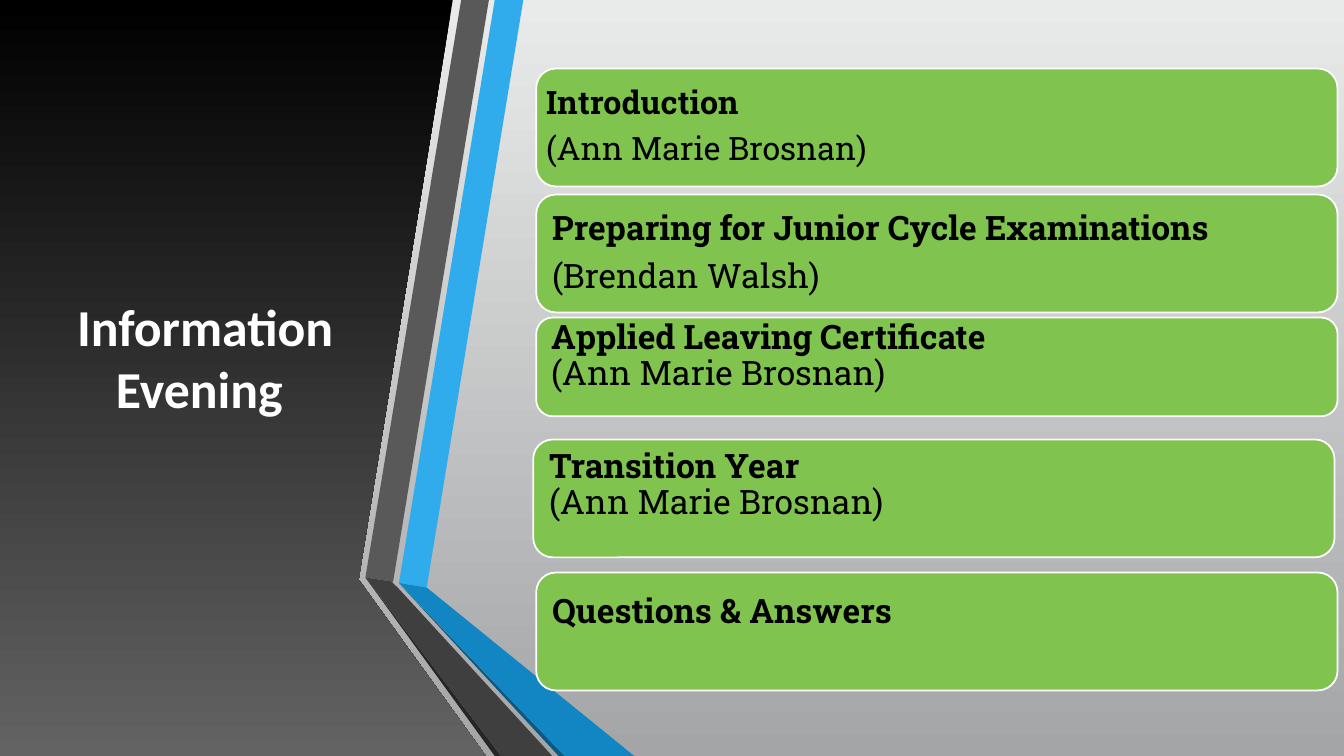
from dataclasses import dataclass

from pptx import Presentation
from pptx.dml.color import RGBColor
from pptx.dml.fill import FillFormat
from pptx.enum.shapes import MSO_SHAPE
from pptx.enum.text import MSO_ANCHOR, MSO_AUTO_SIZE, PP_ALIGN
from pptx.shapes.autoshape import Shape
from pptx.slide import Slide
from pptx.text.text import TextFrame
from pptx.util import Emu, Inches, Pt

COLUMNS, ROWS = 160, 90
WIDTH, HEIGHT = Inches(13.33), Inches(7.5)


@dataclass(frozen=True)
class Theme:
    """Colours, fonts and type sizes of the slide."""

    page: tuple[str, str] = ("E9EAEA", "A3A5A6")
    panel: tuple[str, str] = ("000000", "636363")
    blue: str = "30ACEC"
    blue_fold: str = "1186C3"
    blue_edge: str = "0B5982"
    grey: str = "595959"
    grey_fold: str = "3F3F3F"
    grey_edge: str = "262626"
    card: str = "80C34F"
    white: str = "FFFFFF"
    ink: str = "000000"
    title_font: str = "Calibri"
    card_font: str = "Roboto Slab"
    title_size: float = 37
    card_size: float = 24
    intro_size: float = 23


THEME = Theme()


@dataclass(frozen=True)
class Ribbon:
    """One flat piece of the folded ribbon, as grid points."""

    color: str
    points: tuple[tuple[float, float], ...]


@dataclass(frozen=True)
class Card:
    """One agenda item; lift is the bottom inset that raises its text."""

    top: float
    heading: str
    speaker: str = ""
    left: float = 63.84
    height: float = 14.04
    indent: float = 1.2
    size: float = THEME.card_size
    gap: float = 0
    lift: float = 0


PANEL = ((0, 0), (53.9, 0), (42.7, 69), (57.84, 90), (0, 90))

RIBBONS = (
    Ribbon(THEME.blue, ((47.5, 69.4), (50.8, 69.95), (62.3, 0), (58.9, 0))),
    Ribbon(THEME.grey, ((58.2, 0), (54.9, 0), (43.5, 68.75), (46.8, 69.25))),
    Ribbon(THEME.grey_edge, ((43.5, 68.75), (58.9, 90), (59.65, 90))),
    Ribbon(THEME.blue_edge, ((47.5, 69.45), (66.5, 90), (67.2, 90))),
    Ribbon(THEME.blue_fold, ((47.5, 69.4), (67.2, 90), (75.5, 90), (50.8, 69.95))),
    Ribbon(THEME.grey_fold, ((65.75, 90), (47.35, 69.95), (46.7, 69.35),
                             (46.8, 69.25), (43.5, 68.75), (59.65, 90))),
)

CARDS = (
    Card(8.16, "Introduction", "(Ann Marie Brosnan)", indent=0.5,
         size=THEME.intro_size, gap=8.1),
    Card(23.16, "Preparing for Junior Cycle Examinations", "(Brendan Walsh)", gap=8.4),
    Card(37.8, "Applied Leaving Certificate", "(Ann Marie Brosnan)",
         height=11.76, lift=2.4),
    Card(52.32, "Transition Year", "(Ann Marie Brosnan)", left=63.48, lift=3.1),
    Card(68.16, "Questions & Answers", lift=4.4),
)
CARD_WIDTH = 95.4


def col(n: float) -> Emu:
    """Return the length of n grid columns."""
    return Emu(round(WIDTH * n / COLUMNS))


def row(n: float) -> Emu:
    """Return the length of n grid rows."""
    return Emu(round(HEIGHT * n / ROWS))


def fill_gradient(fill: FillFormat, colors: tuple[str, str]) -> None:
    """Fill from the first colour at the top to the second at the bottom."""
    fill.gradient()
    fill.gradient_angle = 270
    for stop, color in zip(fill.gradient_stops, colors):
        stop.color.rgb = RGBColor.from_string(color)


def fill_solid(fill: FillFormat, color: str) -> None:
    """Fill with one colour."""
    fill.solid()
    fill.fore_color.rgb = RGBColor.from_string(color)


def add_outline(s: Slide, points: tuple[tuple[float, float], ...]) -> Shape:
    """Draw a closed, lineless shape through grid points."""
    start, *rest = [(col(x), row(y)) for x, y in points]
    builder = s.shapes.build_freeform(*start)
    builder.add_line_segments(rest, close=True)
    sp = builder.convert_to_shape()
    sp.shadow.inherit = False
    sp.line.fill.background()
    return sp


def write(tf: TextFrame, text: str, *, font: str, size: float, color: str,
          bold: bool = True, align: PP_ALIGN = PP_ALIGN.LEFT,
          spacing: float = 0.9, before: float = 0) -> None:
    """Write one formatted paragraph, using the first one while it is empty."""
    p = tf.paragraphs[0] if not tf.text else tf.add_paragraph()
    p.alignment, p.line_spacing, p.space_before = align, spacing, Pt(before)
    r = p.add_run()
    r.text = text
    r.font.name, r.font.size, r.font.bold = font, Pt(size), bold
    r.font.color.rgb = RGBColor.from_string(color)


def add_card(s: Slide, card: Card) -> None:
    """Draw an agenda card with its heading and speaker."""
    sp = s.shapes.add_shape(MSO_SHAPE.ROUNDED_RECTANGLE, col(card.left), row(card.top),
                            col(CARD_WIDTH), row(card.height))
    sp.shadow.inherit = False
    fill_solid(sp.fill, THEME.card)
    fill_solid(sp.line.fill, THEME.white)
    sp.line.width = Pt(1.25)
    tf = sp.text_frame
    tf.word_wrap, tf.vertical_anchor = True, MSO_ANCHOR.MIDDLE
    tf.margin_left, tf.margin_right = col(card.indent), col(1.2)
    tf.margin_top, tf.margin_bottom = 0, row(card.lift)
    style = dict(font=THEME.card_font, size=card.size, color=THEME.ink)
    write(tf, card.heading, **style)
    if card.speaker:
        write(tf, card.speaker, bold=False, before=card.gap, **style)


def place_title(s: Slide) -> None:
    """Move the title placeholder onto the dark panel and format it."""
    title = s.shapes.title
    title.left, title.top, title.width, title.height = col(7.08), row(9), col(34.68), row(66.96)
    s.shapes.element.append(title.element)
    tf = title.text_frame
    tf.word_wrap, tf.auto_size = True, MSO_AUTO_SIZE.NONE
    tf.vertical_anchor = MSO_ANCHOR.MIDDLE
    write(tf, "Information Evening ", font=THEME.title_font, size=THEME.title_size,
          color=THEME.white, align=PP_ALIGN.CENTER, spacing=1.0)


def main() -> None:
    """Build the agenda slide and save it."""
    prs = Presentation()
    prs.slide_width, prs.slide_height = WIDTH, HEIGHT
    s = prs.slides.add_slide(prs.slide_layouts[5])
    fill_gradient(s.background.fill, THEME.page)
    fill_gradient(add_outline(s, PANEL).fill, THEME.panel)
    place_title(s)
    for ribbon in RIBBONS:
        fill_solid(add_outline(s, ribbon.points).fill, ribbon.color)
    for card in CARDS:
        add_card(s, card)
    prs.save("out.pptx")


if __name__ == "__main__":
    main()
